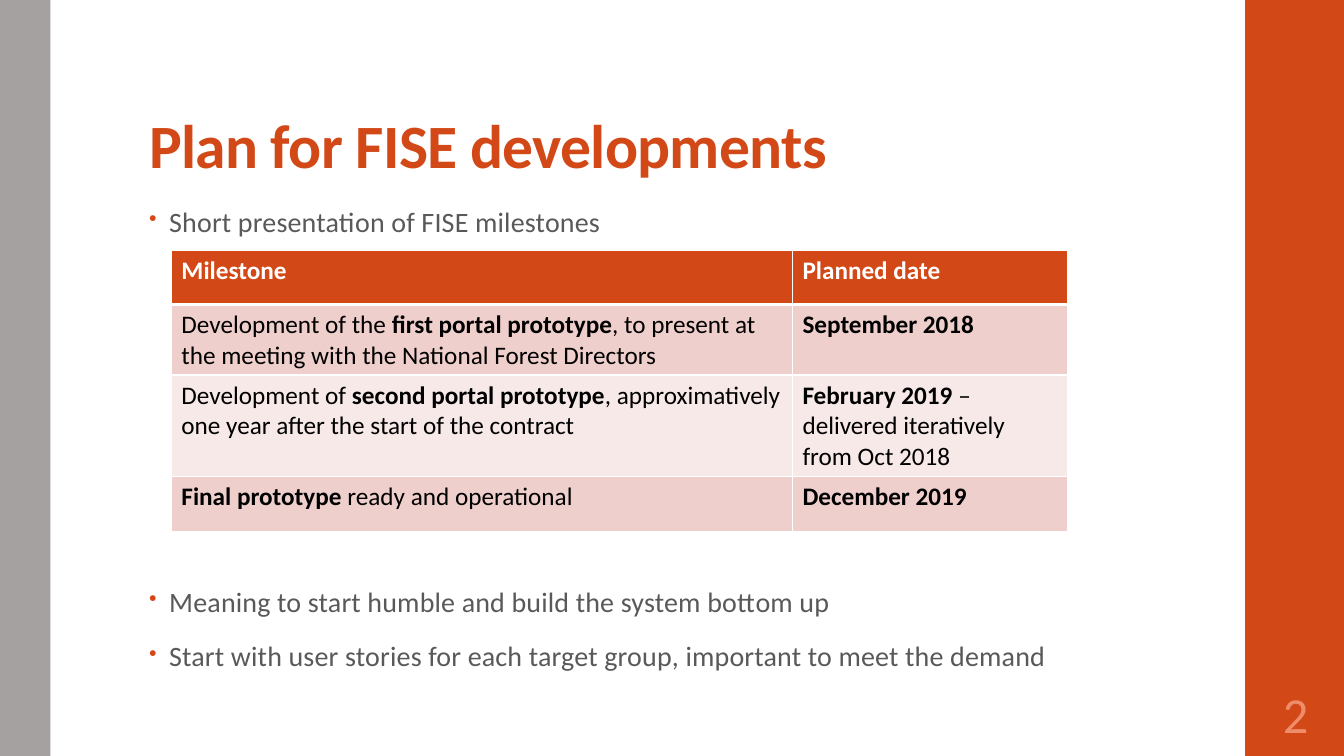
"""Build the slide with the plan and milestones for FISE developments."""
from lxml.etree import SubElement
from pptx import Presentation
from pptx.dml.color import RGBColor
from pptx.enum.shapes import MSO_SHAPE as Shape
from pptx.enum.text import MSO_ANCHOR as Anchor, PP_ALIGN as Align
from pptx.oxml.ns import qn
from pptx.util import Inches, Pt

TITLE = "Plan for FISE developments"
INTRO = ["Short presentation of FISE milestones"]
APPROACH = [
    "Meaning to start humble and build the system bottom up",
    "Start with user stories for each target group, important to meet the demand",
]
PAGE_NUMBER = "2"
MILESTONES = [
    ("**Milestone**", "**Planned date**"),
    ("Development of the **first portal prototype**, to present at the meeting "
     "with the National Forest Directors", "**September 2018**"),
    ("Development of **second portal prototype**, approximatively one year "
     "after the start of the contract",
     "**February 2019 **– delivered iteratively from Oct 2018"),
    ("**Final prototype** ready and operational", "**December 2019**"),
]
COLUMN_WIDTHS = (6.16, 2.73)
ROW_HEIGHTS = (0.54, 0.7, 1.01, 0.54)
SIDEBARS = [(12.35, 1, "accent"), (0, 0.5, "gray")]

THEME = {
    "font": "Calibri",
    "color": {"accent": "D34817", "gray": "A6A1A1", "body": "595959", "white": "FFFFFF",
              "black": "000000", "number": "EF8C6A", "odd": "EFCFCC", "even": "F7E9E8"},
    "size": {"title": 44, "body": 20, "table": 18, "number": 36},
}


def color(name):
    return RGBColor.from_string(THEME["color"][name])


def write(paragraph, text, *, size, ink, bold=False, tracking=0, align=None, line=None):
    """Write text in which double asterisks switch bold on and off."""
    paragraph.alignment = align
    paragraph.line_spacing = line
    for index, part in enumerate(text.split("**")):
        if part:
            run = paragraph.add_run()
            run.text = part
            run.font.name = THEME["font"]
            run.font.size = Pt(THEME["size"][size])
            run.font.bold = bold or index % 2 == 1
            run.font.color.rgb = color(ink)
            if tracking:
                run._r.get_or_add_rPr().set("spc", str(tracking))


def add_frame(slide, left, top, width, height, *, anchor=Anchor.TOP, insets=(0.1, 0.05, 0.1, 0.05)):
    frame = slide.shapes.add_textbox(*map(Inches, (left, top, width, height))).text_frame
    frame.word_wrap = True
    frame.vertical_anchor = anchor
    (frame.margin_left, frame.margin_top,
     frame.margin_right, frame.margin_bottom) = map(Inches, insets)
    return frame


def add_bullets(slide, items, top, height):
    frame = add_frame(slide, 1.38, top, 9.4, height)
    for index, item in enumerate(items):
        paragraph = frame.add_paragraph() if index else frame.paragraphs[0]
        props = paragraph._p.get_or_add_pPr()
        props.set("marL", str(Inches(0.2)))
        props.set("indent", str(Inches(-0.2)))
        tint = SubElement(props, qn("a:buClr"))
        SubElement(tint, qn("a:srgbClr"), val=THEME["color"]["accent"])
        SubElement(props, qn("a:buSzPct"), val="80000")
        SubElement(props, qn("a:buChar"), char="•")
        if index:
            paragraph.space_before = Pt(14)
        paragraph.space_after = Pt(2)
        write(paragraph, item, size="body", ink="body", tracking=10, line=0.95)


def add_borders(cell, **widths):
    for side in ("L", "R", "T", "B"):
        width = Pt(widths.get(side, 1))
        edge = SubElement(cell._tc.get_or_add_tcPr(), qn(f"a:ln{side}"), w=str(width))
        fill = SubElement(edge, qn("a:solidFill"))
        SubElement(fill, qn("a:srgbClr"), val=THEME["color"]["white"])


def add_milestones(slide):
    table = slide.shapes.add_table(
        len(MILESTONES), len(COLUMN_WIDTHS), Inches(1.7), Inches(2.48),
        Inches(sum(COLUMN_WIDTHS)), Inches(sum(ROW_HEIGHTS))).table
    for column, width in zip(table.columns, COLUMN_WIDTHS):
        column.width = Inches(width)
    for row, height in zip(table.rows, ROW_HEIGHTS):
        row.height = Inches(height)
    for r, milestone in enumerate(MILESTONES):
        heading = r == 0
        band = "accent" if heading else "odd" if r % 2 else "even"
        for c, text in enumerate(milestone):
            cell = table.cell(r, c)
            add_borders(cell, T=3 if r == 1 else 1, B=3 if heading else 1)
            cell.fill.solid()
            cell.fill.fore_color.rgb = color(band)
            write(cell.text_frame.paragraphs[0], text, size="table",
                  ink="white" if heading else "black")


def main():
    deck = Presentation()
    deck.slide_width, deck.slide_height = Inches(13.33), Inches(7.5)
    slide = deck.slides.add_slide(deck.slide_layouts[6])
    for left, width, paint in SIDEBARS:
        sidebar = slide.shapes.add_shape(
            Shape.RECTANGLE, Inches(left), 0, Inches(width), deck.slide_height)
        sidebar.shadow.inherit = False
        sidebar.fill.solid()
        sidebar.fill.fore_color.rgb = color(paint)
        sidebar.line.fill.background()
    title = add_frame(slide, 1.38, 0.32, 10.6, 1.53, anchor=Anchor.BOTTOM,
                      insets=(0.1, 0.03, 0.1, 0.05))
    write(title.paragraphs[0], TITLE, size="title", ink="accent", bold=True,
          tracking=-50, line=0.9)
    add_bullets(slide, INTRO, 2, 0.45)
    add_milestones(slide)
    add_bullets(slide, APPROACH, 5.77, 0.99)
    number = add_frame(slide, 12.35, 6.75, 1, 0.65, anchor=Anchor.MIDDLE, insets=(0.05,) * 4)
    write(number.paragraphs[0], PAGE_NUMBER, size="number", ink="number", align=Align.CENTER)
    deck.save("out.pptx")


if __name__ == "__main__":
    main()
